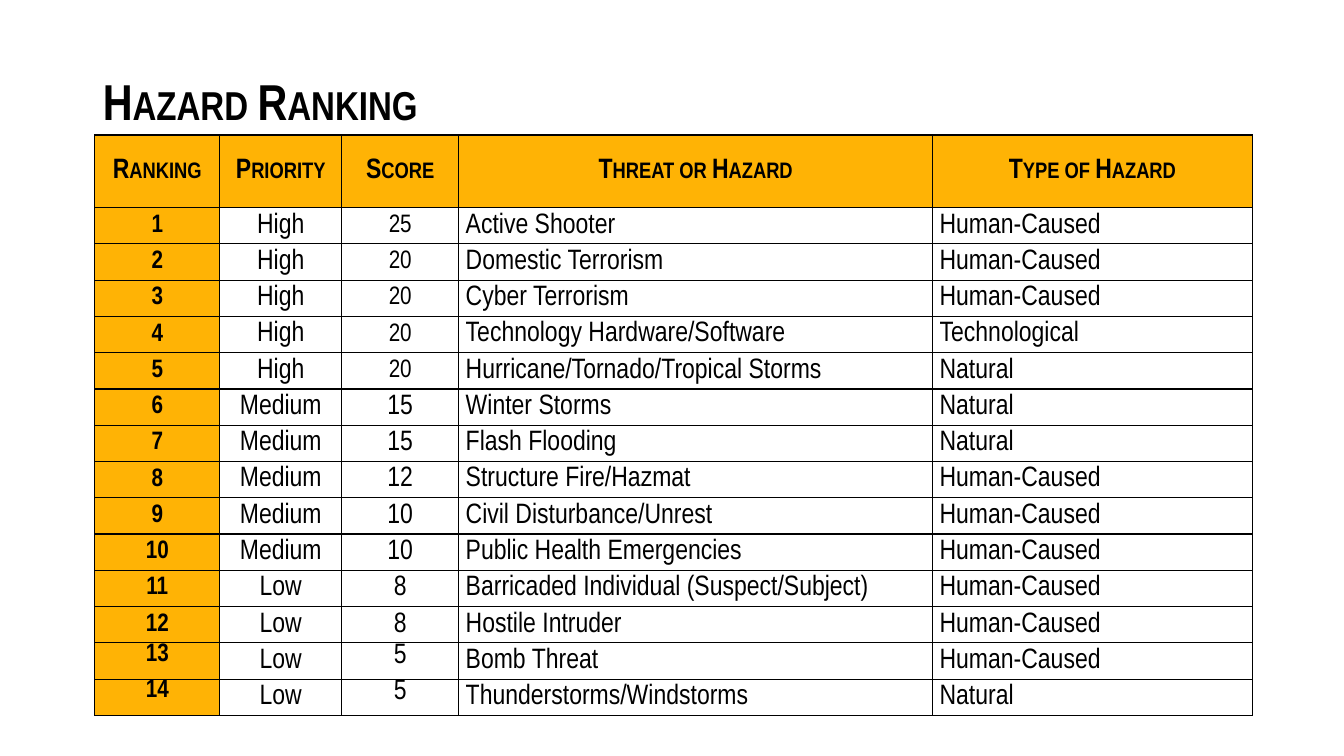
from lxml.etree import SubElement
from pptx import Presentation
from pptx.dml.color import RGBColor
from pptx.enum.text import MSO_ANCHOR, PP_ALIGN
from pptx.oxml.ns import qn
from pptx.util import Inches, Pt

TITLE = "Hazard Ranking"
HEADS = ["Ranking", "Priority", "Score", "Threat or Hazard", "Type of Hazard"]
HUMAN, TECH, NATURAL = "Human-Caused", "Technological", "Natural"
HAZARDS = [
    ("High", 25, "Active Shooter", HUMAN),
    ("High", 20, "Domestic Terrorism", HUMAN),
    ("High", 20, "Cyber Terrorism", HUMAN),
    ("High", 20, "Technology Hardware/Software", TECH),
    ("High", 20, "Hurricane/Tornado/Tropical Storms", NATURAL),
    ("Medium", 15, "Winter Storms", NATURAL),
    ("Medium", 15, "Flash Flooding", NATURAL),
    ("Medium", 12, "Structure Fire/Hazmat", HUMAN),
    ("Medium", 10, "Civil Disturbance/Unrest", HUMAN),
    ("Medium", 10, "Public Health Emergencies", HUMAN),
    ("Low", 8, "Barricaded Individual (Suspect/Subject)", HUMAN),
    ("Low", 8, "Hostile Intruder", HUMAN),
    ("Low", 5, "Bomb Threat", HUMAN),
    ("Low", 5, "Thunderstorms/Windstorms", NATURAL),
]
WIDTHS = [1.24, 1.21, 1.16, 4.7, 3.17]
HEAD_H, ROW_H = 0.72, 0.36
FONT = "Arial Narrow"
BLACK = RGBColor(0x00, 0x00, 0x00)
WHITE = RGBColor(0xFF, 0xFF, 0xFF)
AMBER = RGBColor(0xFF, 0xB3, 0x05)


def style(para, size, bold, small):
    """Set the font of a paragraph, in small capitals if asked."""
    font = para.font
    font.name, font.size, font.bold = FONT, Pt(size), bold
    font.color.rgb = BLACK
    if small:
        para._p.pPr.find(qn("a:defRPr")).set("cap", "small")


def border(cell):
    """Draw a thin black line on each side of a cell."""
    props = cell._tc.get_or_add_tcPr()
    for side in ("lnL", "lnR", "lnT", "lnB"):
        line = SubElement(props, qn(f"a:{side}"), w=str(Pt(1)))
        fill = SubElement(line, qn("a:solidFill"))
        SubElement(fill, qn("a:srgbClr"), val=str(BLACK))


def fill_cell(cell, text, row, col):
    """Write and format one table cell according to its place."""
    head, rank = row == 0, col == 0
    border(cell)
    cell.fill.solid()
    cell.fill.fore_color.rgb = AMBER if head or rank else WHITE
    cell.margin_left = cell.margin_right = Inches(0.07)
    cell.margin_top = cell.margin_bottom = 0
    top = row > 12 and col in (0, 2)
    cell.vertical_anchor = MSO_ANCHOR.TOP if top else MSO_ANCHOR.MIDDLE
    cell.text = str(text)
    para = cell.text_frame.paragraphs[0]
    para.alignment = PP_ALIGN.CENTER if head or col < 3 else PP_ALIGN.LEFT
    para.space_before = para.space_after = Pt(6)
    minor = not head and (rank or (col == 2 and row <= 5))
    style(para, 18 if minor else 20, head or rank, head)


def add_title(slide):
    """Place and format the slide title."""
    title = slide.shapes.title
    title.left, title.top = Inches(0.92), Inches(0.31)
    title.width, title.height = Inches(11.5), Inches(1.45)
    title.text_frame.text = TITLE
    title.text_frame.vertical_anchor = MSO_ANCHOR.MIDDLE
    para = title.text_frame.paragraphs[0]
    para.alignment = PP_ALIGN.LEFT
    para.line_spacing = 0.9
    style(para, 36, True, True)


def add_ranks(slide):
    """Build the table of ranked hazards."""
    rows = [HEADS] + [(rank, *item) for rank, item in enumerate(HAZARDS, 1)]
    height = HEAD_H + ROW_H * len(HAZARDS)
    table = slide.shapes.add_table(
        len(rows), len(HEADS), Inches(0.94), Inches(1.34),
        Inches(sum(WIDTHS)), Inches(height)).table
    table.first_row = table.horz_banding = False
    for column, width in zip(table.columns, WIDTHS):
        column.width = Inches(width)
    for row, values in enumerate(rows):
        table.rows[row].height = Inches(ROW_H if row else HEAD_H)
        for col, text in enumerate(values):
            fill_cell(table.cell(row, col), text, row, col)


def main():
    """Build the slide and save it."""
    deck = Presentation()
    deck.slide_width, deck.slide_height = Inches(13.33), Inches(7.5)
    slide = deck.slides.add_slide(deck.slide_layouts[5])
    add_title(slide)
    add_ranks(slide)
    deck.save("out.pptx")


if __name__ == "__main__":
    main()
